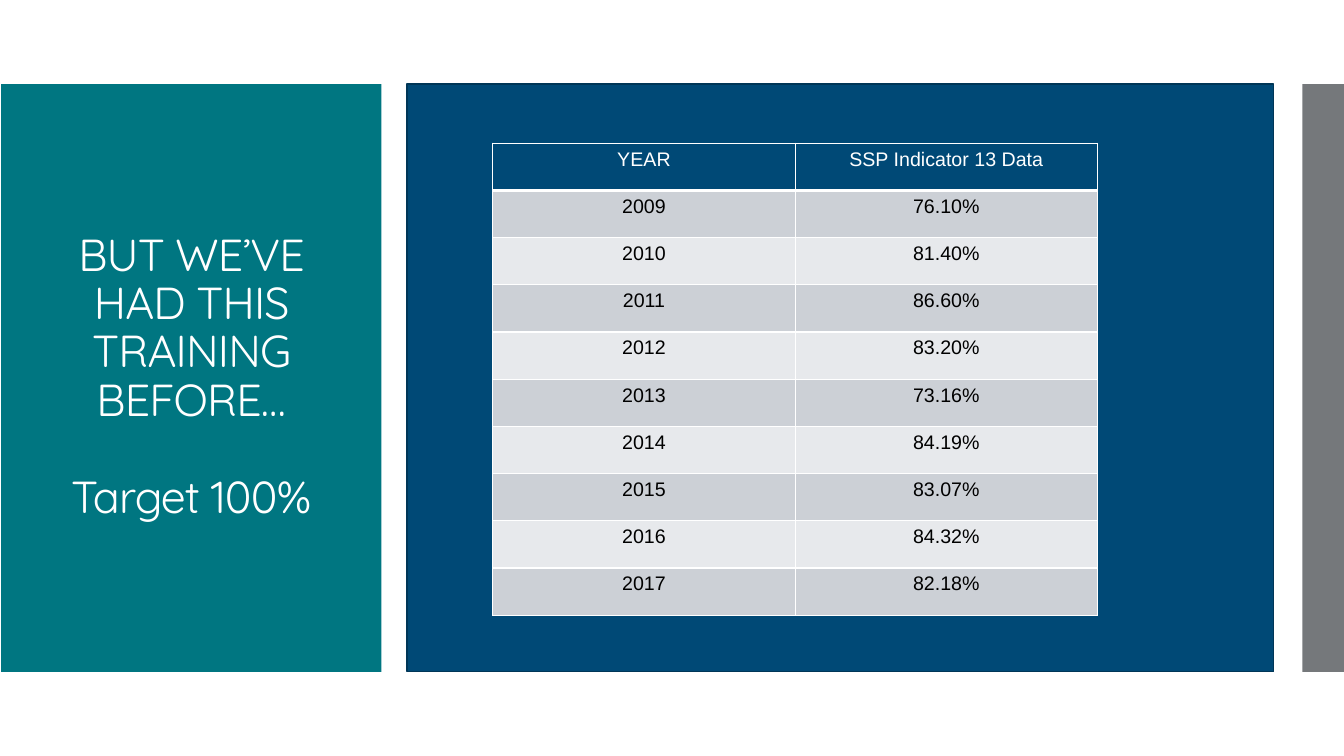
from dataclasses import dataclass

from lxml import etree
from pptx import Presentation
from pptx.dml.color import RGBColor
from pptx.enum import shapes, text
from pptx.oxml import ns
from pptx.util import Cm, Pt


@dataclass(frozen=True)
class Theme:
    white: str = "FFFFFF"
    black: str = "000000"
    navy: str = "004976"
    navy_edge: str = "003657"
    teal: str = "007681"
    gray: str = "75787B"
    bands: tuple = ("CCD0D6", "E7E9EC")
    title_font: str = "Quicksand"
    table_font: str = "Arial"
    title_size: int = 32
    table_size: int = 14


@dataclass(frozen=True)
class Box:
    """A rectangle in centimetres."""
    left: float
    top: float
    width: float
    height: float

    def inset(self, left, top, right, bottom):
        return Box(self.left + left, self.top + top,
                   self.width - left - right, self.height - top - bottom)

    def lengths(self):
        return [Cm(value) for value in (self.left, self.top, self.width, self.height)]


THEME = Theme()
SLIDE_WIDTH, SLIDE_HEIGHT = 33.87, 19.05
PANEL_TOP, PANEL_HEIGHT = 2.12, 14.81
TITLE_PANEL = Box(0.03, PANEL_TOP, 9.58, PANEL_HEIGHT)
DATA_PANEL = Box(10.26, PANEL_TOP, 21.84, PANEL_HEIGHT)
EDGE_PANEL = Box(32.82, PANEL_TOP, 1.05, PANEL_HEIGHT)

TITLE_LINES = ["BUT WE’VE HAD THIS TRAINING BEFORE…", "Target 100%"]
HEADINGS = ("YEAR", "SSP Indicator 13 Data")
RATES = ("76.10%", "81.40%", "86.60%", "83.20%", "73.16%",
         "84.19%", "83.07%", "84.32%", "82.18%")
FIRST_YEAR = 2009


def set_font(paragraph, name, size, color):
    paragraph.alignment = text.PP_ALIGN.CENTER
    paragraph.font.name = name
    paragraph.font.size = Pt(size)
    paragraph.font.color.rgb = RGBColor.from_string(color)


def add_panel(slide, box, color, edge=None):
    panel = slide.shapes.add_shape(shapes.MSO_SHAPE.RECTANGLE, *box.lengths())
    panel.shadow.inherit = False
    panel.fill.solid()
    panel.fill.fore_color.rgb = RGBColor.from_string(color)
    if edge:
        panel.line.color.rgb = RGBColor.from_string(edge)
        panel.line.width = Pt(0.85)
    else:
        panel.line.fill.background()
    return panel


def add_title_region(slide, box):
    panel = add_panel(slide, box, THEME.teal)
    title = slide.shapes.title
    title.element.addprevious(panel.element)
    title.left, title.top, title.width, title.height = box.inset(0.7, 1, 0.7, 1).lengths()
    frame = title.text_frame
    frame.text = "\n".join(TITLE_LINES)
    frame.word_wrap = True
    frame.auto_size = text.MSO_AUTO_SIZE.NONE
    frame.vertical_anchor = text.MSO_ANCHOR.MIDDLE
    for paragraph in frame.paragraphs:
        set_font(paragraph, THEME.title_font, THEME.title_size, THEME.white)
        paragraph.line_spacing = 0.9
        paragraph.space_before = Pt(0)
        for run in paragraph.runs:
            run.font._element.set("spc", "-60")
    frame.paragraphs[-1].space_before = Pt(35)


def set_borders(cell, bottom_width):
    """Draw white rules on all four sides; they must precede the cell's fill."""
    properties = cell._tc.get_or_add_tcPr()
    for side, width in (("L", 1), ("R", 1), ("T", 1), ("B", bottom_width)):
        line = etree.SubElement(properties, ns.qn(f"a:ln{side}"), w=str(Pt(width)))
        fill = etree.SubElement(line, ns.qn("a:solidFill"))
        etree.SubElement(fill, ns.qn("a:srgbClr"), val=THEME.white)


def add_data_region(slide, box):
    add_panel(slide, box, THEME.navy, THEME.navy_edge)
    rows = [HEADINGS] + [(str(year), rate) for year, rate in enumerate(RATES, FIRST_YEAR)]
    area = box.inset(2.16, 1.49, 4.44, 1.43)
    table = slide.shapes.add_table(len(rows), len(HEADINGS), *area.lengths()).table
    for row_index, values in enumerate(rows):
        header = row_index == 0
        fill = THEME.navy if header else THEME.bands[(row_index - 1) % 2]
        color = THEME.white if header else THEME.black
        for column_index, value in enumerate(values):
            cell = table.cell(row_index, column_index)
            cell.text = value
            set_borders(cell, 3 if header else 1)
            cell.fill.solid()
            cell.fill.fore_color.rgb = RGBColor.from_string(fill)
            paragraph = cell.text_frame.paragraphs[0]
            set_font(paragraph, THEME.table_font, THEME.table_size, color)
            paragraph.font.bold = False


def main():
    presentation = Presentation()
    presentation.slide_width, presentation.slide_height = Cm(SLIDE_WIDTH), Cm(SLIDE_HEIGHT)
    slide = presentation.slides.add_slide(presentation.slide_layouts.get_by_name("Title Only"))
    add_title_region(slide, TITLE_PANEL)
    add_data_region(slide, DATA_PANEL)
    add_panel(slide, EDGE_PANEL, THEME.gray)
    presentation.save("out.pptx")


if __name__ == "__main__":
    main()
